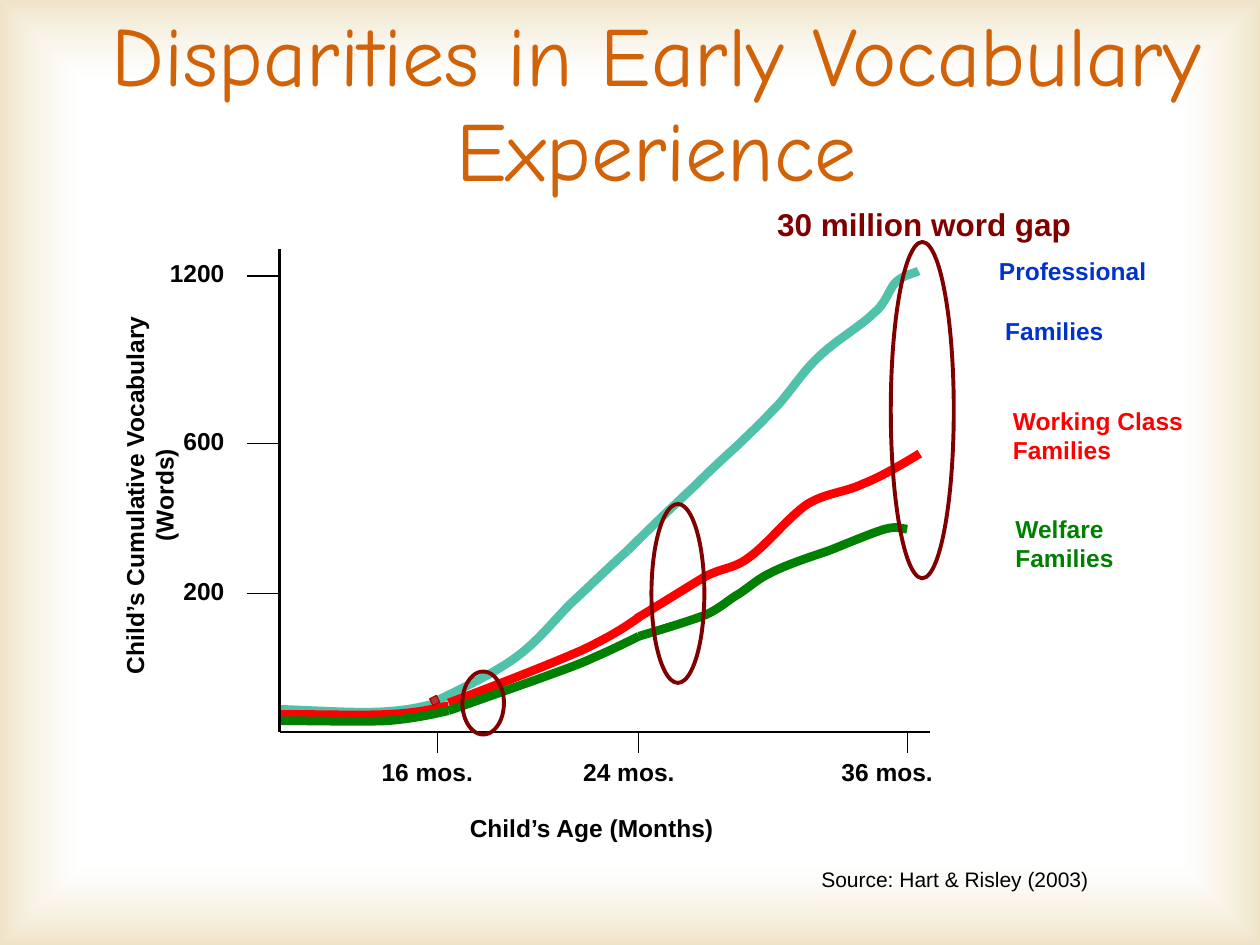
from lxml import etree
from pptx import Presentation
from pptx.dml.color import RGBColor
from pptx.enum.shapes import MSO_CONNECTOR as CONNECTOR, MSO_SHAPE as SHAPE
from pptx.enum.text import MSO_ANCHOR as ANCHOR, PP_ALIGN as ALIGN
from pptx.oxml import parse_xml
from pptx.oxml.ns import nsdecls, qn
from pptx.util import Inches, Pt

COLORS = {
    "black": "000000", "title": "D16207", "gap": "800000",
    "professional": "51C2A9", "working": "FF0000", "welfare": "008000",
    "professional_label": "0033CC", "marker": "BF2F37", "marker_edge": "A40A06",
    "white": "FFFFFF", "frame": "BE8A0D",
}

# Each curve is a start point followed by cubic Bezier triples,
# in inches from the top left corner of the plot.
CURVES = [
    ("professional", [(0, 3.65), (0.3, 3.66), (0.59, 3.68), (0.8, 3.67),
                      (1.01, 3.66), (1.13, 3.63), (1.25, 3.6)]),
    ("professional", [(1.25, 3.58), (1.47, 3.47), (1.69, 3.37), (1.87, 3.24),
                      (2.05, 3.11), (2.17, 2.95), (2.31, 2.81),
                      (2.46, 2.67), (2.68, 2.46), (2.76, 2.39)]),
    ("professional", [(2.76, 2.39), (2.95, 2.2), (3.14, 2.02), (3.29, 1.88),
                      (3.44, 1.73), (3.54, 1.64), (3.65, 1.54),
                      (3.75, 1.44), (3.81, 1.39), (3.91, 1.28),
                      (4.02, 1.18), (4.14, 0.98), (4.27, 0.86),
                      (4.4, 0.73), (4.61, 0.61), (4.71, 0.51),
                      (4.82, 0.42), (4.83, 0.32), (4.89, 0.26),
                      (4.95, 0.2), (5.04, 0.19), (5.07, 0.17)]),
    ("working", [(0, 3.69), (0.32, 3.69), (0.64, 3.7), (0.86, 3.69),
                 (1.08, 3.68), (1.21, 3.65), (1.34, 3.62)]),
    ("working", [(1.34, 3.6), (1.74, 3.45), (2.15, 3.29), (2.4, 3.18),
                 (2.65, 3.06), (2.75, 2.99), (2.85, 2.92)]),
    ("working", [(2.83, 2.93), (3.03, 2.81), (3.22, 2.69), (3.37, 2.6),
                 (3.52, 2.52), (3.6, 2.54), (3.73, 2.44),
                 (3.87, 2.34), (4.04, 2.12), (4.19, 2.02),
                 (4.34, 1.93), (4.48, 1.93), (4.63, 1.86),
                 (4.78, 1.8), (4.93, 1.71), (5.08, 1.62)]),
    ("welfare", [(0, 3.74), (0.32, 3.74), (0.64, 3.75), (0.86, 3.74),
                 (1.08, 3.72), (1.21, 3.69), (1.34, 3.66)]),
    ("welfare", [(1.34, 3.66), (1.6, 3.57), (1.85, 3.48), (2.05, 3.41),
                 (2.24, 3.34), (2.36, 3.3), (2.49, 3.24),
                 (2.63, 3.18), (2.79, 3.1), (2.85, 3.07)]),
    ("welfare", [(2.85, 3.07), (3.05, 3.01), (3.25, 2.95), (3.38, 2.9),
                 (3.51, 2.84), (3.56, 2.78), (3.65, 2.73),
                 (3.74, 2.67), (3.8, 2.61), (3.91, 2.56),
                 (4.03, 2.5), (4.21, 2.44), (4.36, 2.39),
                 (4.51, 2.33), (4.7, 2.25), (4.8, 2.22),
                 (4.91, 2.19), (4.95, 2.22), (4.98, 2.22)]),
]
# Tick position and left edge of its label
AGE_TICKS = [("16 mos.", 1.25, 0.71), ("24 mos.", 2.85, 2.31), ("36 mos.", 4.98, 4.36)]
# Tick position down the axis
WORD_TICKS = [("1200", 0.21), ("600", 1.54), ("200", 2.73)]


def rgb(name):
    return RGBColor.from_string(COLORS[name])


def style_shape(shape, line=None, width=1, fill=None):
    shape.shadow.inherit = False
    if fill:
        shape.fill.solid()
        shape.fill.fore_color.rgb = rgb(fill)
    else:
        shape.fill.background()
    if line:
        shape.line.color.rgb = rgb(line)
        shape.line.width = Pt(width)
    else:
        shape.line.fill.background()


def add_text(slide, left, top, width, height, text, size=14, color="black",
             bold=True, font="Arial", align=ALIGN.LEFT):
    box = slide.shapes.add_textbox(Inches(left), Inches(top), Inches(width), Inches(height))
    box.text_frame.word_wrap = True
    box.text_frame.text = text
    for paragraph in box.text_frame.paragraphs:
        paragraph.alignment = align
        for run in paragraph.runs:
            run.font.size, run.font.bold, run.font.name = Pt(size), bold, font
            run.font.color.rgb = rgb(color)
    return box


def add_line(slide, x1, y1, x2, y2, width):
    line = slide.shapes.add_connector(
        CONNECTOR.STRAIGHT, Inches(x1), Inches(y1), Inches(x2), Inches(y2))
    line.line.color.rgb = rgb("black")
    line.line.width = Pt(width)
    etree.SubElement(line._element.spPr, qn("a:effectLst"))


def add_curve(slide, left, top, points, color):
    """Draw a freeform through the points and turn its segments into Bezier triples."""
    placed = [(Inches(left + x), Inches(top + y)) for x, y in points]
    builder = slide.shapes.build_freeform(*placed[0])
    builder.add_line_segments(placed[1:], close=False)
    shape = builder.convert_to_shape()
    segments = list(shape._element.iter(qn("a:lnTo")))
    for start in range(0, len(segments), 3):
        bezier = etree.Element(qn("a:cubicBezTo"))
        segments[start].addprevious(bezier)
        for segment in segments[start:start + 3]:
            bezier.append(segment[0])
            segment.getparent().remove(segment)
    style_shape(shape, color, 5)


def add_frame(slide, width, height):
    """Shade the slide from a white centre to soft tan edges."""
    frame = slide.shapes.add_shape(SHAPE.RECTANGLE, 0, 0, width, height)
    style_shape(frame)
    gradient = parse_xml(
        f'<a:gradFill {nsdecls("a")}><a:gsLst>'
        f'<a:gs pos="83000"><a:srgbClr val="{COLORS["white"]}"><a:alpha val="11000"/></a:srgbClr></a:gs>'
        f'<a:gs pos="100000"><a:srgbClr val="{COLORS["frame"]}"><a:alpha val="23000"/></a:srgbClr></a:gs>'
        '</a:gsLst><a:path path="rect">'
        '<a:fillToRect l="50000" t="50000" r="50000" b="50000"/></a:path></a:gradFill>')
    properties = frame._element.spPr
    properties.replace(properties.find(qn("a:noFill")), gradient)


def add_title(slide, left, top, width, height):
    title = add_text(slide, left, top, width, height,
                     "Disparities in Early Vocabulary Experience",
                     48, "title", False, "Comic Neue", ALIGN.CENTER)
    title.text_frame.vertical_anchor = ANCHOR.MIDDLE
    title.text_frame.paragraphs[0].line_spacing = 0.95


def add_plot(slide, left, top, width, height):
    bottom = top + height
    for color, points in CURVES:
        add_curve(slide, left, top, points, color)
    marker = slide.shapes.add_shape(
        SHAPE.RECTANGLE, Inches(left + 1.2), Inches(top + 3.55), Inches(0.06), Inches(0.06))
    marker.rotation = 64.2
    style_shape(marker, "marker_edge", 0.75, "marker")

    add_line(slide, left, top, left, bottom, 1.5)
    add_line(slide, left, bottom, left + width, bottom, 1.5)
    for label, x, label_x in AGE_TICKS:
        add_line(slide, left + x, bottom, left + x, bottom + 0.17, 0.75)
        add_text(slide, left + label_x, bottom + 0.15, 0.99, 0.34, label)
    for label, y in WORD_TICKS:
        add_line(slide, left - 0.26, top + y, left, top + y, 0.75)
        add_text(slide, left - 1.01, top + y - 0.19, 0.67, 0.34, label, align=ALIGN.RIGHT)

    add_text(slide, left + 1.41, bottom + 0.59, 2.28, 0.34, "Child’s Age (Months)")
    axis_title = add_text(slide, left - 2.71, top + 1.65, 3.38, 0.6,
                          "Child’s Cumulative Vocabulary (Words)", align=ALIGN.CENTER)
    axis_title.rotation = 270


def add_family_labels(slide, left, top):
    professional = add_text(slide, left, top, 1.6, 0.8, "Professional\nFamilies",
                            color="professional_label")
    second_line = professional.text_frame.paragraphs[1]
    second_line.space_before = Pt(17.5)
    second_line._p.get_or_add_pPr().set("marL", str(Inches(0.05)))
    add_text(slide, left + 0.11, top + 1.19, 1.66, 0.57, "Working Class\nFamilies", color="working")
    add_text(slide, left + 0.13, top + 2.05, 1.28, 0.57, "Welfare\nFamilies", color="welfare")


def add_gap_callouts(slide, left, top):
    add_text(slide, left + 2.4, top - 0.34, 2.58, 0.4, "30 million word gap", 18, "gap")
    for x, y, width, height in [(0, 3.41, 0.33, 0.5), (1.5, 2.08, 0.42, 1.42), (3.4, 0, 0.5, 2.67)]:
        oval = slide.shapes.add_shape(SHAPE.OVAL, Inches(left + x), Inches(top + y),
                                      Inches(width), Inches(height))
        style_shape(oval, "gap", 2.25)


def main():
    presentation = Presentation()
    presentation.slide_width, presentation.slide_height = Inches(10), Inches(7.5)
    slide = presentation.slides.add_slide(presentation.slide_layouts[6])
    add_frame(slide, presentation.slide_width, presentation.slide_height)
    add_plot(slide, 2.22, 1.98, 5.16, 3.83)
    add_family_labels(slide, 7.83, 1.98)
    add_title(slide, 0.75, 0.25, 8.92, 1.17)
    add_text(slide, 6.42, 6.83, 2.92, 0.3, "Source: Hart & Risley (2003)", 12, bold=False)
    add_gap_callouts(slide, 3.67, 1.92)
    presentation.save("out.pptx")


if __name__ == "__main__":
    main()
